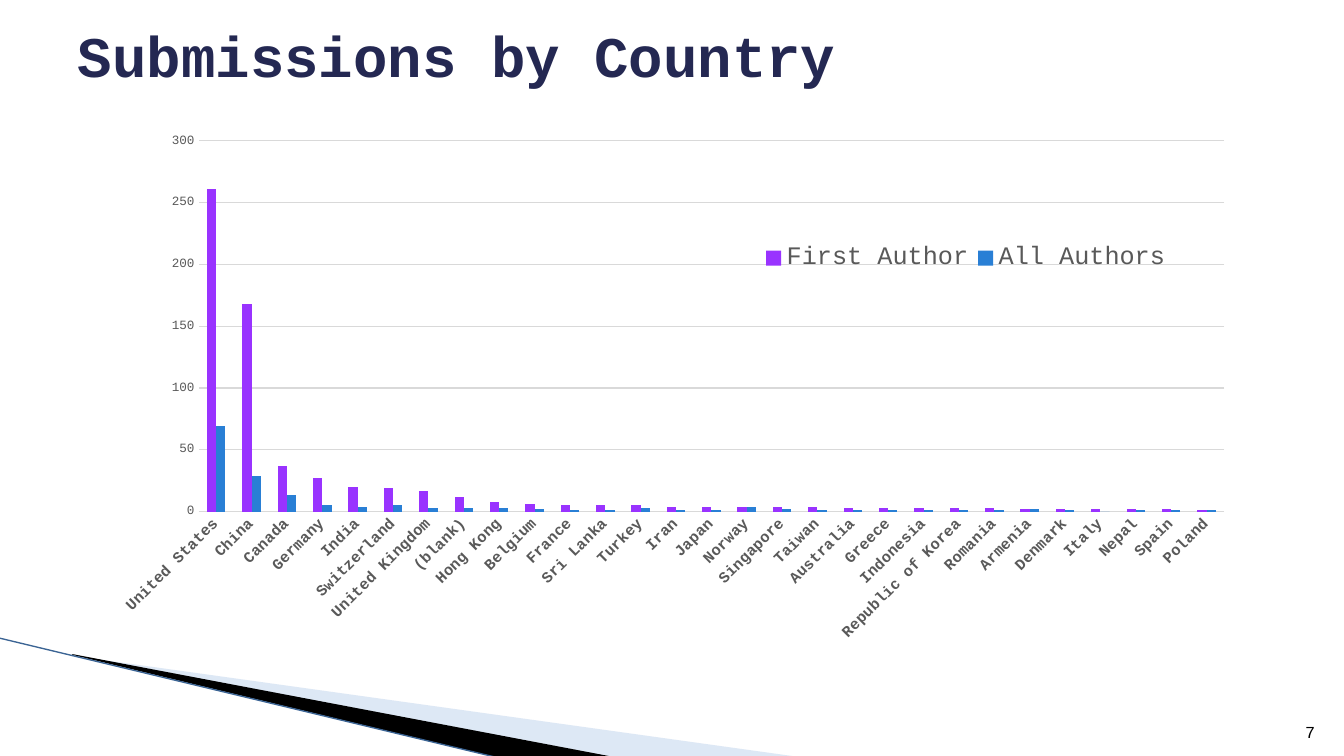
import lxml.etree
import pptx
import pptx.chart.data
import pptx.dml.color
import pptx.enum.chart
import pptx.enum.shapes
import pptx.enum.text
import pptx.oxml
import pptx.oxml.ns
import pptx.util

RGBColor = pptx.dml.color.RGBColor
NAVY = RGBColor(0x24, 0x28, 0x52)
BLACK = RGBColor(0x00, 0x00, 0x00)
PALE_BLUE = RGBColor(0xAB, 0xC6, 0xE6)
EDGE_BLUE = RGBColor(0x3B, 0x64, 0x94)
GREY = RGBColor(0x59, 0x59, 0x59)
GRID_GREY = RGBColor(0xD9, 0xD9, 0xD9)
PURPLE = RGBColor(0x99, 0x33, 0xFF)
BLUE = RGBColor(0x29, 0x7F, 0xD5)

FONT = "Courier New"
EMU_PER_PX = 914400 / 100.8
qn = pptx.oxml.ns.qn

# Country, submissions by first author, submissions by all authors
SUBMISSIONS = [
    ("United States", 261, 69), ("China", 168, 29), ("Canada", 37, 13),
    ("Germany", 27, 5), ("India", 20, 4), ("Switzerland", 19, 5),
    ("United Kingdom", 17, 3), ("(blank)", 12, 3), ("Hong Kong", 8, 3),
    ("Belgium", 6, 2), ("France", 5, 1), ("Sri Lanka", 5, 1),
    ("Turkey", 5, 3), ("Iran", 4, 1), ("Japan", 4, 1), ("Norway", 4, 4),
    ("Singapore", 4, 2), ("Taiwan", 4, 1), ("Australia", 3, 1),
    ("Greece", 3, 1), ("Indonesia", 3, 1), ("Republic of Korea", 3, 1),
    ("Romania", 3, 1), ("Armenia", 2, 2), ("Denmark", 2, 1),
    ("Italy", 2, 0), ("Nepal", 2, 1), ("Spain", 2, 1), ("Poland", 1, 1),
]


def px(length):
    return pptx.util.Emu(round(length * EMU_PER_PX))


def set_font(font, size, color, bold=False):
    font.name = FONT
    font.size = pptx.util.Pt(size)
    font.color.rgb = color
    font.bold = bold


def write_text(text_frame, text, size, color, bold=False, align="LEFT", anchor="MIDDLE"):
    text_frame.word_wrap = True
    text_frame.vertical_anchor = getattr(pptx.enum.text.MSO_ANCHOR, anchor)
    paragraph = text_frame.paragraphs[0]
    paragraph.text = text
    paragraph.alignment = getattr(pptx.enum.text.PP_ALIGN, align)
    set_font(paragraph.runs[0].font, size, color, bold)


def make_layout(x, y, width, height, inner=False):
    """Build a manual chart layout, given as fractions of the chart."""
    layout = lxml.etree.Element(qn("c:layout"))
    manual = lxml.etree.SubElement(layout, qn("c:manualLayout"))
    settings = [("layoutTarget", "inner")] if inner else []
    settings += [("xMode", "edge"), ("yMode", "edge"),
                 ("x", x), ("y", y), ("w", width), ("h", height)]
    for tag, value in settings:
        lxml.etree.SubElement(manual, qn("c:" + tag)).set("val", str(value))
    return layout


class SlideBuilder:
    def __init__(self, presentation):
        self.slide = presentation.slides.add_slide(presentation.slide_layouts[6])
        self.shapes = self.slide.shapes

    def text(self, left, top, width, height, text, **text_format):
        box = self.shapes.add_textbox(px(left), px(top), px(width), px(height))
        write_text(box.text_frame, text, **text_format)

    def polygon(self, points, color, opacity=100):
        builder = self.shapes.build_freeform(*points[0], scale=EMU_PER_PX)
        builder.add_line_segments(points[1:], close=True)
        shape = builder.convert_to_shape()
        shape.shadow.inherit = False
        shape.fill.solid()
        shape.fill.fore_color.rgb = color
        shape.line.fill.background()
        if opacity < 100:
            color_element = shape.fill._xPr.find(".//" + qn("a:srgbClr"))
            alpha = lxml.etree.SubElement(color_element, qn("a:alpha"))
            alpha.set("val", str(opacity * 1000))

    def line(self, start, end, color, width):
        connector = self.shapes.add_connector(
            pptx.enum.shapes.MSO_CONNECTOR.STRAIGHT, *map(px, start + end))
        connector.line.color.rgb = color
        connector.line.width = pptx.util.Pt(width)
        lxml.etree.SubElement(connector._element.spPr, qn("a:effectLst"))

    def column_chart(self, left, top, width, height, rows, series_colors):
        countries, *columns = zip(*rows)
        data = pptx.chart.data.CategoryChartData()
        data.categories = countries
        for name, values in zip(series_colors, columns):
            data.add_series(name, values)
        chart = self.shapes.add_chart(
            pptx.enum.chart.XL_CHART_TYPE.COLUMN_CLUSTERED,
            px(left), px(top), px(width), px(height), data).chart
        set_font(chart.font, 10, BLACK)
        chart.has_title = False

        # Columns
        plot = chart.plots[0]
        plot.vary_by_categories = False
        plot.gap_width = 182
        plot.overlap = 0
        for series, color in zip(plot.series, series_colors.values()):
            series.format.fill.solid()
            series.format.fill.fore_color.rgb = color
            series.invert_if_negative = False

        self.style_axes(chart)
        self.style_legend(chart)

        # Plot area
        plot_area = chart._chartSpace.chart.plotArea
        for old_layout in plot_area.findall(qn("c:layout")):
            plot_area.remove(old_layout)
        plot_area.insert(0, make_layout(0.14, 0.126, 0.809, 0.55, inner=True))

    def style_axes(self, chart):
        no_tick = pptx.enum.chart.XL_TICK_MARK.NONE
        for axis in (chart.category_axis, chart.value_axis):
            axis.major_tick_mark = no_tick
            axis.minor_tick_mark = no_tick
        countries, counts = chart.category_axis, chart.value_axis
        set_font(countries.tick_labels.font, 11, GREY, bold=True)
        set_font(counts.tick_labels.font, 9, GREY)
        label_body = countries._element.find(qn("c:txPr")).find(qn("a:bodyPr"))
        label_body.set("rot", str(-45 * 60000))
        label_body.set("vert", "horz")
        counts.minimum_scale, counts.maximum_scale, counts.major_unit = 0, 300, 50
        counts.has_major_gridlines = True
        counts.format.line.fill.background()
        for line in (countries.format.line, counts.major_gridlines.format.line):
            line.color.rgb = GRID_GREY
            line.width = pptx.util.Pt(0.75)

    def style_legend(self, chart):
        chart.has_legend = True
        legend = chart.legend
        legend.position = pptx.enum.chart.XL_LEGEND_POSITION.BOTTOM
        legend.include_in_layout = False
        set_font(legend.font, 18, GREY)
        element = legend._element
        for old_layout in element.findall(qn("c:layout")):
            element.remove(old_layout)
        element.find(qn("c:legendPos")).addnext(make_layout(0.58, 0.27, 0.33, 0.06))


def main():
    presentation = pptx.Presentation()
    presentation.slide_width, presentation.slide_height = px(1344), px(756)
    builder = SlideBuilder(presentation)

    # Corner decoration
    builder.polygon([(74, 656), (799, 757), (613, 757), (74, 655)], PALE_BLUE, opacity=40)
    builder.polygon([(72, 654), (614, 757), (500, 758), (73, 655)], BLACK)
    builder.line((-1, 638), (499, 758), EDGE_BLUE, 0.95)

    # Title and page number
    builder.text(68, -8, 1210, 126, "Submissions by Country", size=41, color=NAVY, bold=True)
    builder.text(1254, 707, 71, 40, "7", size=12, color=BLACK, align="RIGHT", anchor="BOTTOM")

    # Submissions chart
    builder.column_chart(21, 56, 1268, 674, SUBMISSIONS,
                         {"First Author": PURPLE, "All Authors": BLUE})

    presentation.save("out.pptx")


if __name__ == "__main__":
    main()
